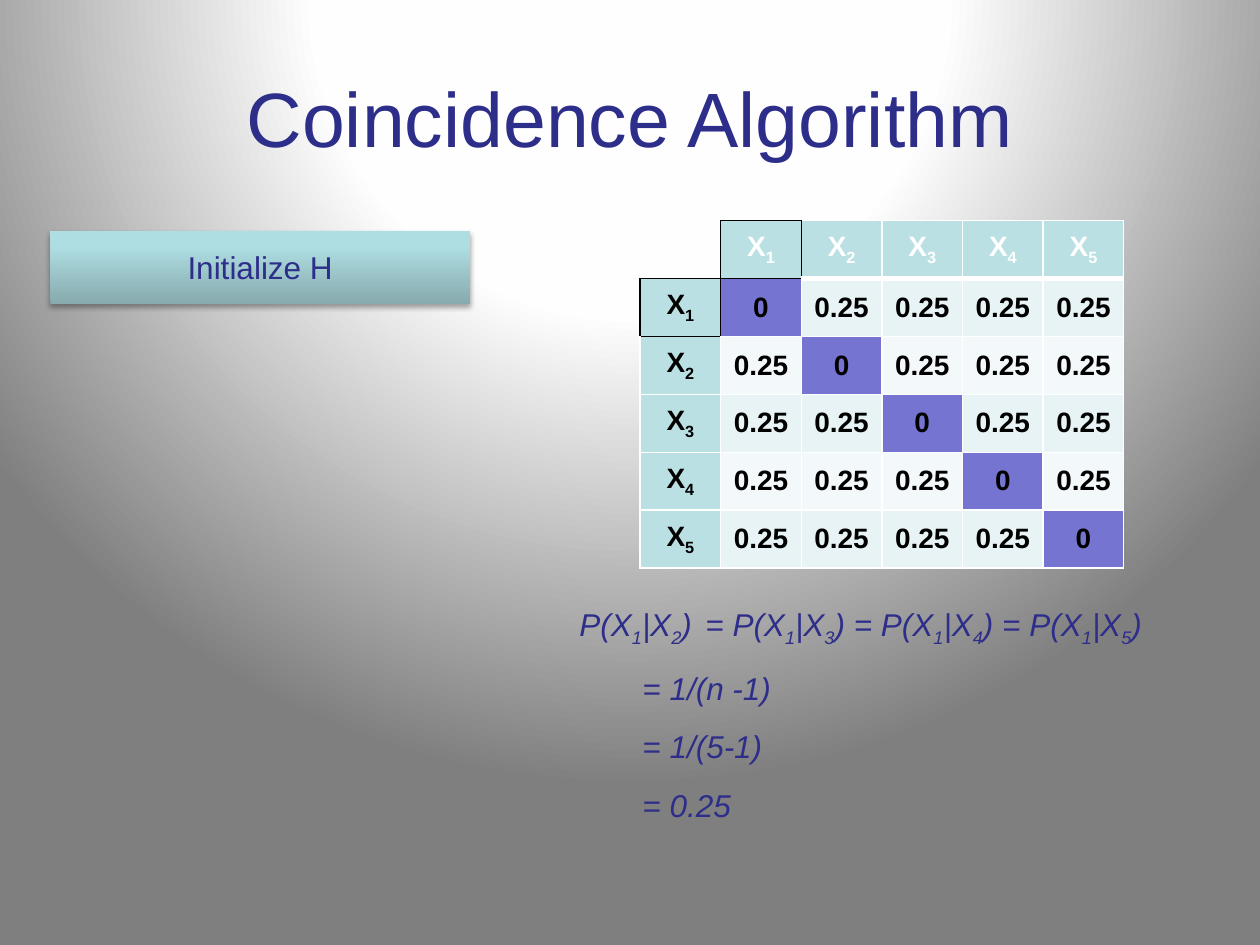
import pptx
import pptx.dml.color
import pptx.enum.shapes
import pptx.enum.text
import pptx.oxml
import pptx.oxml.ns
import pptx.util
from pptx.util import Inches

TITLE = "Coincidence Algorithm"
STEP = "Initialize H"
# An underscore makes the next character a subscript.
VARIABLES = ["X_1", "X_2", "X_3", "X_4", "X_5"]
DERIVATION = [
    "P(X_1|X_2)\t= P(X_1|X_3) = P(X_1|X_4) = P(X_1|X_5)",
    "\t= 1/(n -1)",
    "\t= 1/(5-1)",
    "\t= 0.25",
]
INK, BLACK, WHITE = "2D2D8A", "000000", "FFFFFF"
HEADER, DIAGONAL, BANDS = "BBE0E3", "7575D1", ["E7F3F4", "F3F9FA"]
BACKDROP = [(0, "FFFFFF"), (40, "FEFEFE"), (100, "7F7F7F")]
STEP_SHADES = [(0, "87ABAE"), (80, "AFDEE2"), (100, "AFE0E4")]
# Sides of (row, column) cells drawn in black.
BLACK_SIDES = {(0, 0): "RB", (0, 1): "LRTB", (1, 0): "LRTB",
               (0, 2): "L", (1, 1): "LT", (2, 0): "T"}
CELL_WIDTH, CELL_HEIGHT = 0.64, 0.46
CENTER = pptx.enum.text.PP_ALIGN.CENTER
MIDDLE = pptx.enum.text.MSO_ANCHOR.MIDDLE
NAMESPACE = pptx.oxml.ns.nsdecls("a")


def rgb(code):
    return pptx.dml.color.RGBColor.from_string(code)


def write(para, text, size, color, bold=False, italic=False):
    """Add text as runs, with subscripts where it has underscores."""
    first, *rest = text.split("_")
    pieces = [(first, False)]
    for part in rest:
        pieces += [(part[0], True), (part[1:], False)]
    for piece, lowered in pieces:
        if not piece:
            continue
        span = para.add_run()
        span.text = piece
        font = span.font
        font.name, font.size = "Arial", pptx.util.Pt(size)
        font.bold, font.italic = bold, italic
        font.color.rgb = rgb(color)
        if lowered:
            font._element.set("baseline", "-25000")


def set_gradient(fill, parent, stops, direction):
    """Put a gradient in place of the fill of parent."""
    fill.solid()
    marks = "".join(
        f'<a:gs pos="{place * 1000}"><a:srgbClr val="{color}"/></a:gs>'
        for place, color in stops)
    gradient = pptx.oxml.parse_xml(
        f'<a:gradFill {NAMESPACE} rotWithShape="1">'
        f"<a:gsLst>{marks}</a:gsLst>{direction}</a:gradFill>")
    solid = parent.find(pptx.oxml.ns.qn("a:solidFill"))
    parent.replace(solid, gradient)


def add_border(cell, side, color, width):
    cell._tc.get_or_add_tcPr().append(pptx.oxml.parse_xml(
        f'<a:ln{side} {NAMESPACE} w="{width * 12700}"><a:solidFill>'
        f'<a:srgbClr val="{color}"/></a:solidFill></a:ln{side}>'))


def add_title(page):
    title = page.shapes.title
    title.left, title.top = Inches(0.5), Inches(0.3)
    title.width, title.height = Inches(9), Inches(1.25)
    title.text_frame.vertical_anchor = MIDDLE
    para = title.text_frame.paragraphs[0]
    para.alignment = CENTER
    write(para, TITLE, 44, INK)


def add_step(page):
    box = page.shapes.add_shape(
        pptx.enum.shapes.MSO_SHAPE.RECTANGLE,
        Inches(0.4), Inches(1.83), Inches(3.33), Inches(0.58))
    properties = box._element.spPr
    set_gradient(box.fill, properties, STEP_SHADES,
                 '<a:lin ang="16200000" scaled="0"/>')
    box.line.fill.background()
    box.shadow.inherit = False
    properties.find(pptx.oxml.ns.qn("a:effectLst")).append(
        pptx.oxml.parse_xml(
            f'<a:outerShdw {NAMESPACE} blurRad="39370" dist="22860" '
            f'dir="5400000" rotWithShape="0"><a:srgbClr val="{BLACK}">'
            '<a:alpha val="35000"/></a:srgbClr></a:outerShdw>'))
    box.text_frame.vertical_anchor = MIDDLE
    para = box.text_frame.paragraphs[0]
    para.alignment = CENTER
    write(para, STEP, 18, INK)


def cell_look(row, column):
    """Return the text, text colour and fill of a matrix cell."""
    if row == 0:
        return VARIABLES[column - 1], WHITE, HEADER
    if column == 0:
        return VARIABLES[row - 1], BLACK, HEADER
    if row == column:
        return "0", BLACK, DIAGONAL
    return "0.25", BLACK, BANDS[(row - 1) % 2]


def add_matrix(page):
    count = len(VARIABLES) + 1
    table = page.shapes.add_table(
        count, count, Inches(5.08), Inches(1.75),
        Inches(count * CELL_WIDTH), Inches(count * CELL_HEIGHT)).table
    table.first_row = table.horz_banding = False
    for index in range(count):
        table.columns[index].width = Inches(CELL_WIDTH)
        table.rows[index].height = Inches(CELL_HEIGHT)
    for row in range(count):
        for column in range(count):
            cell = table.cell(row, column)
            corner = row == column == 0
            black = BLACK_SIDES.get((row, column), "")
            for side in "LRTB":
                if side in black:
                    add_border(cell, side, BLACK, 1)
                elif not corner:
                    thick = row == 0 and side == "B"
                    add_border(cell, side, WHITE, 3 if thick else 1)
            if corner:
                cell.fill.background()
                continue
            text, color, shade = cell_look(row, column)
            cell.fill.solid()
            cell.fill.fore_color.rgb = rgb(shade)
            cell.vertical_anchor = MIDDLE
            cell.margin_left = cell.margin_right = Inches(0.09)
            cell.margin_top = cell.margin_bottom = Inches(0.04)
            para = cell.text_frame.paragraphs[0]
            para.alignment = CENTER
            write(para, text, 16, color, bold=True)


def add_derivation(page):
    box = page.shapes.add_textbox(
        Inches(4.5), Inches(4.75), Inches(4.85), Inches(1.82))
    frame = box.text_frame
    frame.word_wrap = False
    frame.auto_size = pptx.enum.text.MSO_AUTO_SIZE.SHAPE_TO_FIT_TEXT
    for index, line in enumerate(DERIVATION):
        para = frame.add_paragraph() if index else frame.paragraphs[0]
        para.space_before = pptx.util.Pt(12)
        write(para, line, 18, INK, italic=True)


def main():
    deck = pptx.Presentation()
    deck.slide_width, deck.slide_height = Inches(10), Inches(7.5)
    page = deck.slides.add_slide(deck.slide_layouts[5])
    backdrop = page.background.fill
    backdrop.solid()
    set_gradient(
        backdrop, page._element.cSld.bg.bgPr, BACKDROP,
        '<a:path path="circle"><a:fillToRect l="50000" t="-80000" '
        'r="50000" b="180000"/></a:path>')
    add_title(page)
    add_step(page)
    add_matrix(page)
    add_derivation(page)
    deck.save("out.pptx")


if __name__ == "__main__":
    main()
